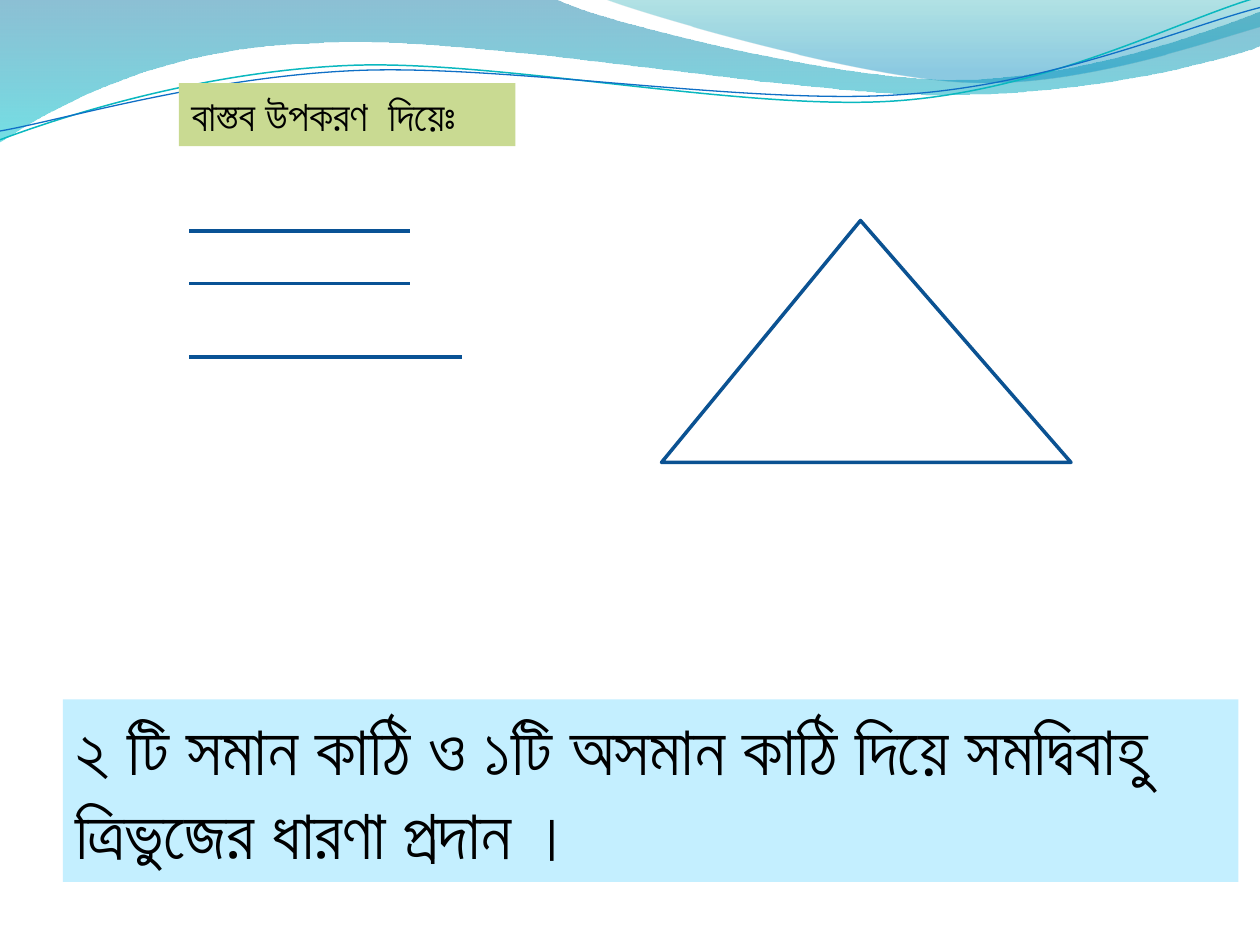
from dataclasses import dataclass

from lxml import etree
from pptx import Presentation
from pptx.dml.color import RGBColor
from pptx.enum import shapes, text
from pptx.oxml import ns
from pptx.util import Inches, Pt


@dataclass(frozen=True)
class Theme:
    font: str = "Calibri"
    ink: str = "000000"
    title_fill: str = "C9DA92"
    note_fill: str = "C4EFFF"
    stick: str = "095295"
    triangle: str = "0B5292"
    wave_teal: str = "0AB8BF"
    wave_blue: str = "0F6FC6"
    title_size: int = 24
    note_size: int = 40
    # Gradient stops: position, colour, opacity in percent
    band: tuple = ((0, "0074A1", 45), (1, "00C6CF", 55))
    crest: tuple = ((0, "00A1A9", 30), (0.8, "008BBF", 45))


THEME = Theme()

# Each part is one point (line) or three points (cubic curve), in inches.
BAND = [(0, 0), (4.4, -0.01),
        (4.76, 0.17, 6.64, 0.63, 7.58, 0.63), (8.53, 0.63, 9.58, 0.26, 10, 0.09),
        (10.01, 0.36),
        (9.83, 0.44, 8.7, 0.76, 7.46, 0.75), (6.22, 0.75, 3.82, 0.28, 2.57, 0.34),
        (1.29, 0.36, 0.46, 0.83, -0.01, 1.13), (0, 0)]
CREST = [(4.79, -0.01),
         (5.09, 0.11, 6.82, 0.62, 7.69, 0.65), (8.56, 0.69, 9.61, 0.32, 10, 0.21),
         (10, 0), (4.79, -0.01)]
TEAL_WAVE = [(0, 1.11),
             (0.48, 0.93, 1.58, 0.57, 2.77, 0.52), (3.95, 0.47, 5.93, 0.89, 7.13, 0.8),
             (8.33, 0.71, 9.38, 0.15, 9.98, -0.02)]
BLUE_WAVE = [(0, 1.04),
             (0.47, 0.96, 1.64, 0.61, 2.83, 0.56), (4.03, 0.51, 5.97, 0.84, 7.17, 0.75),
             (8.36, 0.67, 9.41, 0.21, 10, 0.06)]


def rgb(value):
    return RGBColor.from_string(value)


def add_outline(slide, box, parts, closed):
    """Draw every point as a line end, then join each curve's three lines."""
    left, top = box[:2]
    points = [(left + Inches(part[i]), top + Inches(part[i + 1]))
              for part in parts for i in range(0, len(part), 2)]
    builder = slide.shapes.build_freeform(*points[0], scale=1.0)
    builder.add_line_segments(points[1:], close=closed)
    shape = builder.convert_to_shape()
    shape.shadow.inherit = False
    lines = iter(list(shape._element.spPr.iter(ns.qn("a:lnTo"))))
    for part in parts[1:]:
        line = next(lines)
        if len(part) == 6:
            line.tag = ns.qn("a:cubicBezTo")
            for _ in range(2):
                extra = next(lines)
                line.append(extra[0])
                extra.getparent().remove(extra)
    return shape


def add_gradient_area(slide, box, parts, stops):
    shape = add_outline(slide, box, parts, closed=True)
    shape.line.fill.background()
    shape.fill.gradient()
    shape.fill.gradient_angle = 270
    for stop, (position, color, _) in zip(shape.fill.gradient_stops, stops):
        stop.position = position
        stop.color.rgb = rgb(color)
    colors = shape._element.spPr.iter(ns.qn("a:srgbClr"))
    for element, (_, _, opacity) in zip(colors, stops):
        etree.SubElement(element, ns.qn("a:alpha")).set("val", str(opacity * 1000))


def add_wave_line(slide, box, parts, color, width):
    shape = add_outline(slide, box, parts, closed=False)
    shape.fill.background()
    shape.line.color.rgb = rgb(color)
    shape.line.width = Pt(width)


def add_header_waves(slide, box):
    add_gradient_area(slide, box, BAND, THEME.band)
    add_gradient_area(slide, box, CREST, THEME.crest)
    add_wave_line(slide, box, TEAL_WAVE, THEME.wave_teal, 0.85)
    add_wave_line(slide, box, BLUE_WAVE, THEME.wave_blue, 0.75)


def add_text(slide, box, lines, *, size, fill, color=THEME.ink):
    shape = slide.shapes.add_textbox(*box)
    shape.fill.solid()
    shape.fill.fore_color.rgb = rgb(fill)
    frame = shape.text_frame
    frame.word_wrap = True
    frame.auto_size = text.MSO_AUTO_SIZE.SHAPE_TO_FIT_TEXT
    for index, line in enumerate(lines):
        paragraph = frame.paragraphs[0] if index == 0 else frame.add_paragraph()
        run = paragraph.add_run()
        run.text = line
        run.font.name = THEME.font
        run.font.size = Pt(size)
        run.font.color.rgb = rgb(color)


def add_triangle(slide, box):
    triangle = slide.shapes.add_shape(shapes.MSO_SHAPE.ISOSCELES_TRIANGLE, *box)
    triangle.adjustments[0] = 0.486
    triangle.shadow.inherit = False
    triangle.fill.background()
    triangle.line.color.rgb = rgb(THEME.triangle)
    triangle.line.width = Pt(2)


def add_sticks(slide, box):
    """Two equal sticks above a longer one that spans the box."""
    left, top, width, height = box
    short = Inches(1.75)
    for offset, length in ((Inches(0.42), short), (0, short), (height, width)):
        y = top + offset
        stick = slide.shapes.add_connector(
            shapes.MSO_CONNECTOR.STRAIGHT, left, y, left + length, y)
        stick.line.color.rgb = rgb(THEME.stick)
        stick.line.width = Pt(2.25)
        etree.SubElement(stick._element.spPr, ns.qn("a:effectLst"))


def inches_box(*lengths):
    return tuple(Inches(length) for length in lengths)


def main():
    presentation = Presentation()
    presentation.slide_width, presentation.slide_height = Inches(10), Inches(7.5)
    slide = presentation.slides.add_slide(presentation.slide_layouts[6])
    add_header_waves(slide, inches_box(0, 0, 10, 1.13))
    add_text(slide, inches_box(0.5, 5.55, 9.33, 1.45),
             ["২ টি সমান কাঠি ও ১টি অসমান কাঠি দিয়ে সমদ্বিবাহু", "ত্রিভুজের ধারণা প্রদান ।"],
             size=THEME.note_size, fill=THEME.note_fill)
    add_triangle(slide, inches_box(5.25, 1.75, 3.25, 1.92))
    add_sticks(slide, inches_box(1.5, 1.83, 2.17, 1))
    add_text(slide, inches_box(1.42, 0.66, 2.67, 0.5), ["বাস্তব উপকরণ  দিয়েঃ"],
             size=THEME.title_size, fill=THEME.title_fill)
    presentation.save("out.pptx")


if __name__ == "__main__":
    main()
